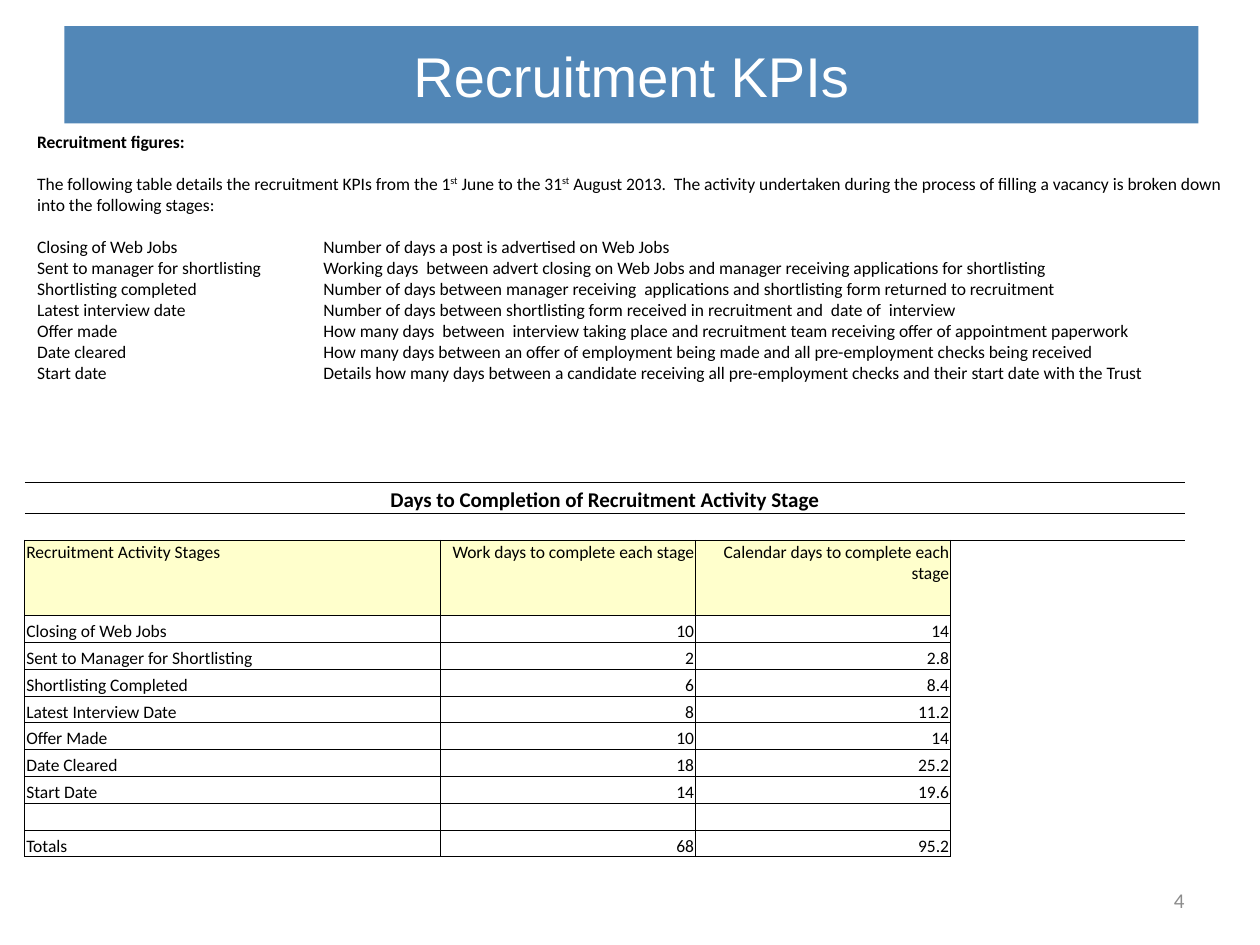
from lxml.etree import SubElement
from pptx import Presentation
from pptx.dml.color import RGBColor
from pptx.enum.shapes import MSO_SHAPE
from pptx.enum.text import MSO_ANCHOR, PP_ALIGN
from pptx.oxml.ns import qn
from pptx.util import Cm, Pt

BLACK = RGBColor(0x00, 0x00, 0x00)
WHITE = RGBColor(0xFF, 0xFF, 0xFF)
GREY = RGBColor(0x8C, 0x8C, 0x8C)
BLUE = RGBColor(0x52, 0x87, 0xB7)
YELLOW = RGBColor(0xFF, 0xFF, 0xCC)

NO_STYLE = "{2D5ABB26-0587-4C30-8999-92F81FD0307C}"
DESCRIPTION_TAB = Cm(5.77)
INTRODUCTION = [
    ("The following table details the recruitment KPIs from the 1", False),
    ("st", True),
    (" June to the 31", False),
    ("st", True),
    (" August 2013.  The activity undertaken during the process of filling "
     "a vacancy is broken down into the following stages:", False),
]
STAGES = [
    ("Closing of Web Jobs", "Number of days a post is advertised on Web Jobs"),
    ("Sent to manager for shortlisting",
     "Working days  between advert closing on Web Jobs and manager receiving applications for shortlisting"),
    ("Shortlisting completed",
     "Number of days between manager receiving  applications and shortlisting form returned to recruitment"),
    ("Latest interview date",
     "Number of days between shortlisting form received in recruitment and  date of  interview"),
    ("Offer made",
     "How many days  between  interview taking place and recruitment team receiving offer of appointment paperwork"),
    ("Date cleared",
     "How many days between an offer of employment being made and all pre-employment checks being received"),
    ("Start date",
     "Details how many days between a candidate receiving all pre-employment checks and their start date with the Trust"),
]
TABLE_ROWS = [
    ("Days to Completion of Recruitment Activity Stage", "", "", ""),
    ("", "", "", ""),
    ("Recruitment Activity Stages", "Work days to complete each stage",
     "Calendar days to complete each stage", ""),
    ("Closing of Web Jobs", "10", "14", ""),
    ("Sent to Manager for Shortlisting", "2", "2.8", ""),
    ("Shortlisting Completed", "6", "8.4", ""),
    ("Latest Interview Date", "8", "11.2", ""),
    ("Offer Made", "10", "14", ""),
    ("Date Cleared", "18", "25.2", ""),
    ("Start Date", "14", "19.6", ""),
    ("", "", "", ""),
    ("Totals", "68", "95.2", ""),
]
COLUMN_WIDTHS = [Cm(8.38), Cm(5.14), Cm(5.14), Cm(4.73)]
TITLE_ROW, GAP_ROW, HEADING_ROW = 0, 1, 2


def add_text(paragraph, text, size=10, font="Calibri", color=BLACK, bold=False,
             align=PP_ALIGN.LEFT, superscript=False):
    paragraph.alignment = align
    run = paragraph.add_run()
    run.text = text
    run.font.size = Pt(size)
    run.font.name = font
    run.font.bold = bold
    run.font.color.rgb = color
    if superscript:
        run.font._element.set("baseline", "30000")


def add_title(slide):
    shape = slide.shapes.add_shape(MSO_SHAPE.RECTANGLE, Cm(1.3), Cm(0.53), Cm(22.86), Cm(1.96))
    shape.shadow.inherit = False
    shape.fill.solid()
    shape.fill.fore_color.rgb = BLUE
    shape.line.fill.background()
    shape.text_frame.vertical_anchor = MSO_ANCHOR.MIDDLE
    add_text(shape.text_frame.paragraphs[0], "Recruitment KPIs", size=32,
             font="Arial", color=WHITE, align=PP_ALIGN.CENTER)


def add_text_frame(slide, left, top, width, height):
    frame = slide.shapes.add_textbox(left, top, width, height).text_frame
    frame.word_wrap = True
    return frame


def add_tab_stop(paragraph, position):
    tabs = SubElement(paragraph._p.get_or_add_pPr(), qn("a:tabLst"))
    SubElement(tabs, qn("a:tab"), pos=str(position), algn="l")


def add_figures(slide):
    frame = add_text_frame(slide, Cm(0.5), Cm(2.51), Cm(24.62), Cm(5.4))
    add_text(frame.paragraphs[0], "Recruitment figures:", bold=True)

    introduction = frame.add_paragraph()
    introduction.space_before = introduction.space_after = Pt(12)
    for text, superscript in INTRODUCTION:
        add_text(introduction, text, superscript=superscript)

    for stage, description in STAGES:
        paragraph = frame.add_paragraph()
        add_tab_stop(paragraph, DESCRIPTION_TAB)
        add_text(paragraph, f"{stage}\t{description}")


def add_borders(cell, edges):
    properties = cell._tc.get_or_add_tcPr()
    for edge in edges:
        line = SubElement(properties, qn(f"a:ln{edge}"), w=str(Pt(0.5)))
        fill = SubElement(line, qn("a:solidFill"))
        SubElement(fill, qn("a:srgbClr"), val=str(BLACK))


def border_edges(row, column):
    last_column = column == len(COLUMN_WIDTHS) - 1
    if row == TITLE_ROW:
        return "TB"
    if row == GAP_ROW:
        return "T" if last_column else "TB"
    return "L" if last_column else "LRTB"


def format_cell(cell, text, row, column):
    cell.margin_left = cell.margin_right = cell.margin_top = Cm(0.03)
    cell.margin_bottom = 0
    cell.vertical_anchor = MSO_ANCHOR.TOP if row == HEADING_ROW else MSO_ANCHOR.BOTTOM
    add_borders(cell, border_edges(row, column))
    if row == HEADING_ROW and column < len(COLUMN_WIDTHS) - 1:
        cell.fill.solid()
        cell.fill.fore_color.rgb = YELLOW
    else:
        cell.fill.background()

    paragraph = cell.text_frame.paragraphs[0]
    if not text:
        SubElement(paragraph._p, qn("a:endParaRPr"), sz="1000")
    elif row == TITLE_ROW:
        add_text(paragraph, text, size=12, bold=True, align=PP_ALIGN.CENTER)
    else:
        add_text(paragraph, text, align=PP_ALIGN.RIGHT if column else PP_ALIGN.LEFT)


def add_stage_table(slide):
    frame = slide.shapes.add_table(len(TABLE_ROWS), len(COLUMN_WIDTHS),
                                   Cm(0.5), Cm(9.72), sum(COLUMN_WIDTHS), Cm(7.5))
    table = frame.table
    table.first_row = table.horz_banding = False
    table._tbl.tblPr.find(qn("a:tableStyleId")).text = NO_STYLE
    for column, width in zip(table.columns, COLUMN_WIDTHS):
        column.width = width
    special_heights = {TITLE_ROW: Cm(0.63), HEADING_ROW: Cm(1.52)}
    for row, texts in enumerate(TABLE_ROWS):
        table.rows[row].height = special_heights.get(row, Cm(0.54))
        for column, text in enumerate(texts):
            format_cell(table.cell(row, column), text, row, column)
    table.cell(TITLE_ROW, 0).merge(table.cell(TITLE_ROW, len(COLUMN_WIDTHS) - 1))


def add_page_number(slide):
    frame = add_text_frame(slide, Cm(18.2), Cm(17.65), Cm(5.93), Cm(1.01))
    frame.vertical_anchor = MSO_ANCHOR.MIDDLE
    add_text(frame.paragraphs[0], "4", size=12, color=GREY, align=PP_ALIGN.RIGHT)


def main():
    presentation = Presentation()
    presentation.slide_width = Cm(25.4)
    presentation.slide_height = Cm(19.05)
    slide = presentation.slides.add_slide(presentation.slide_layouts[6])
    add_title(slide)
    add_page_number(slide)
    add_stage_table(slide)
    add_figures(slide)
    presentation.save("out.pptx")


if __name__ == "__main__":
    main()
